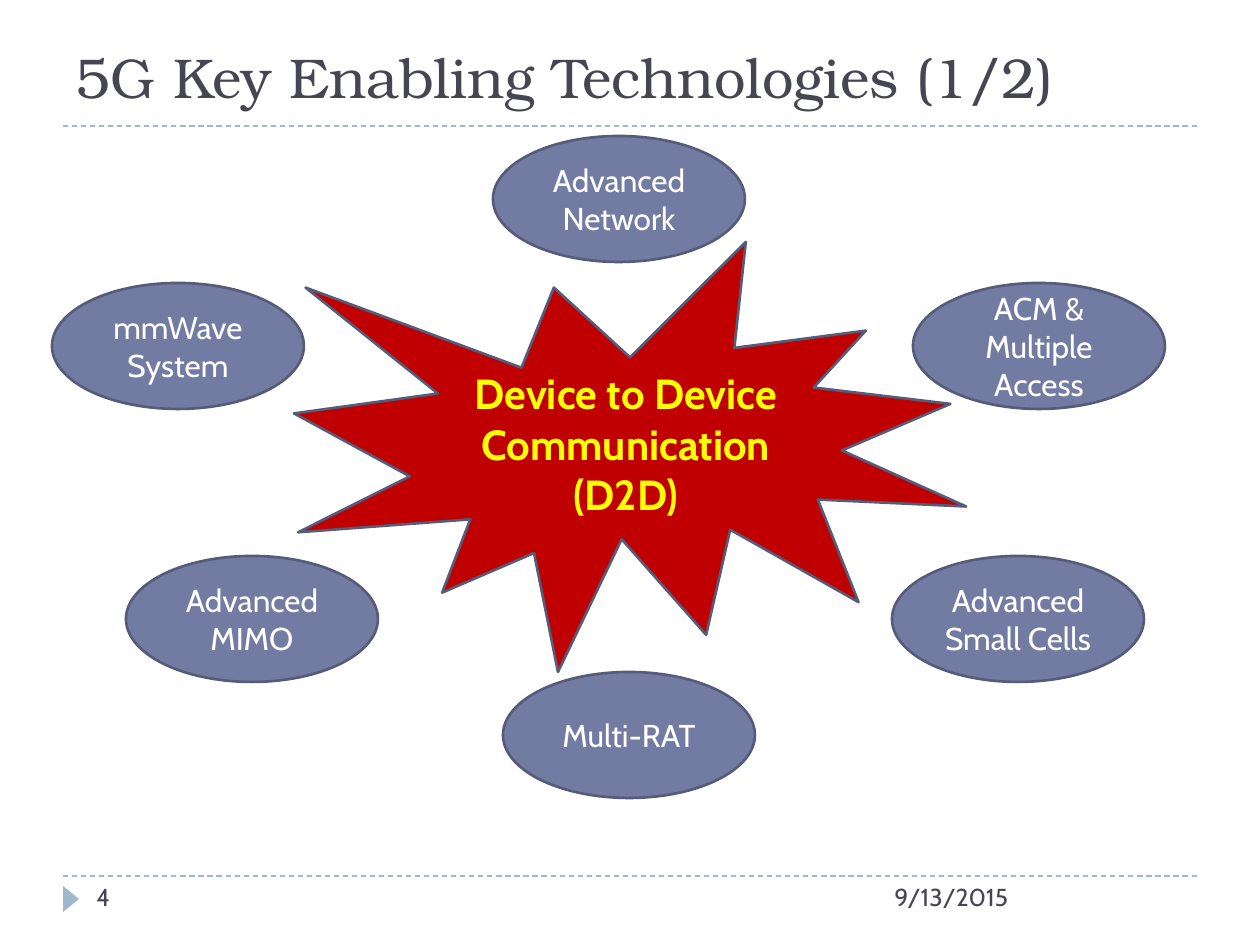
"""Build the slide on 5G key enabling technologies."""
from pptx import Presentation
from pptx import util as u
from pptx.dml.color import RGBColor
from pptx.enum import dml, shapes, text
from pptx.oxml.ns import qn
from lxml import etree

SCALE = 914400 / 126
LEFT, RIGHT = 63, 1197
HEADING_FONT, BODY_FONT = "TeX Gyre Bonum", "Cabin"
INK = RGBColor(0x46, 0x46, 0x53)
RULE = RGBColor(0x9F, 0xB8, 0xCD)
SLATE = RGBColor(0x72, 0x7C, 0xA3)
OUTLINE = RGBColor(0x54, 0x5C, 0x79)
RED = RGBColor(0xC0, 0x00, 0x00)
YELLOW = RGBColor(0xFF, 0xFF, 0x00)
WHITE = RGBColor(0xFF, 0xFF, 0xFF)

TECHNOLOGIES = [
    ("mmWave System", 52, 283),
    ("Multi-RAT", 503, 672),
    ("Advanced MIMO", 126, 556),
    ("Advanced Small Cells", 892, 556),
    ("ACM & Multiple Access", 913, 283),
    ("Advanced Network", 493, 136),
]


def px(*lengths):
    return [u.Emu(round(length * SCALE)) for length in lengths]


def write(frame, words, size, color, align, font=BODY_FONT, bold=False):
    frame.text = words
    frame.word_wrap = True
    for para in frame.paragraphs:
        para.alignment = align
        for span in para.runs:
            span.font.name = font
            span.font.size = u.Pt(size)
            span.font.bold = bold
            span.font.color.rgb = color


def add_title(page, words):
    title = page.shapes.title
    title.left, title.top, title.width, title.height = px(LEFT, 0, RIGHT - LEFT, 116)
    write(title.text_frame, words, 32, INK, text.PP_ALIGN.LEFT, HEADING_FONT)
    title.text_frame.vertical_anchor = text.MSO_ANCHOR.BOTTOM
    title.text_frame.auto_size = text.MSO_AUTO_SIZE.NONE


def add_rule(page, y):
    rule = page.shapes.add_connector(
        shapes.MSO_CONNECTOR.STRAIGHT, *px(LEFT, y, RIGHT, y))
    rule.line.color.rgb = RULE
    rule.line.width = u.Pt(0.75)
    rule.line.dash_style = dml.MSO_LINE.DASH
    etree.SubElement(rule.element.spPr, qn("a:effectLst"))


def add_figure(page, kind, bounds, fill, outline=None):
    figure = page.shapes.add_shape(kind, *px(*bounds))
    figure.shadow.inherit = False
    figure.fill.solid()
    figure.fill.fore_color.rgb = fill
    if outline is None:
        figure.line.fill.background()
    else:
        figure.line.color.rgb = outline
        figure.line.width = u.Pt(1.5)
    return figure


def add_technology(page, words, x, y):
    oval = add_figure(page, shapes.MSO_SHAPE.OVAL, (x, y, 252, 126), SLATE, OUTLINE)
    write(oval.text_frame, words, 18, WHITE, text.PP_ALIGN.CENTER)
    return oval


def add_footer_text(page, words, x, width):
    box = page.shapes.add_textbox(*px(x, 876, width, 50))
    write(box.text_frame, words, 14, INK, text.PP_ALIGN.LEFT)


def main():
    deck = Presentation()
    deck.slide_width, deck.slide_height = px(1260, 945)
    page = deck.slides.add_slide(deck.slide_layouts[5])

    for y in (876, 126):
        add_rule(page, y)
    marker = add_figure(
        page, shapes.MSO_SHAPE.ISOSCELES_TRIANGLE, (58, 891, 26, 16), RULE)
    marker.rotation = 90
    add_title(page, "5G Key Enabling Technologies (1/2)")

    burst = add_figure(
        page, shapes.MSO_SHAPE.EXPLOSION1, (294, 242, 672, 430), RED, OUTLINE)
    write(burst.text_frame, "Device to Device\nCommunication\n(D2D)",
          24, YELLOW, text.PP_ALIGN.CENTER, bold=True)

    for words, x, y in TECHNOLOGIES:
        oval = add_technology(page, words, x, y)
        if words == "Advanced Small Cells":
            oval.text_frame.margin_left = oval.text_frame.margin_right = 0

    add_footer_text(page, "9/13/2015", 882, 315)
    add_footer_text(page, "4", 84, 273)
    deck.save("out.pptx")


if __name__ == "__main__":
    main()
